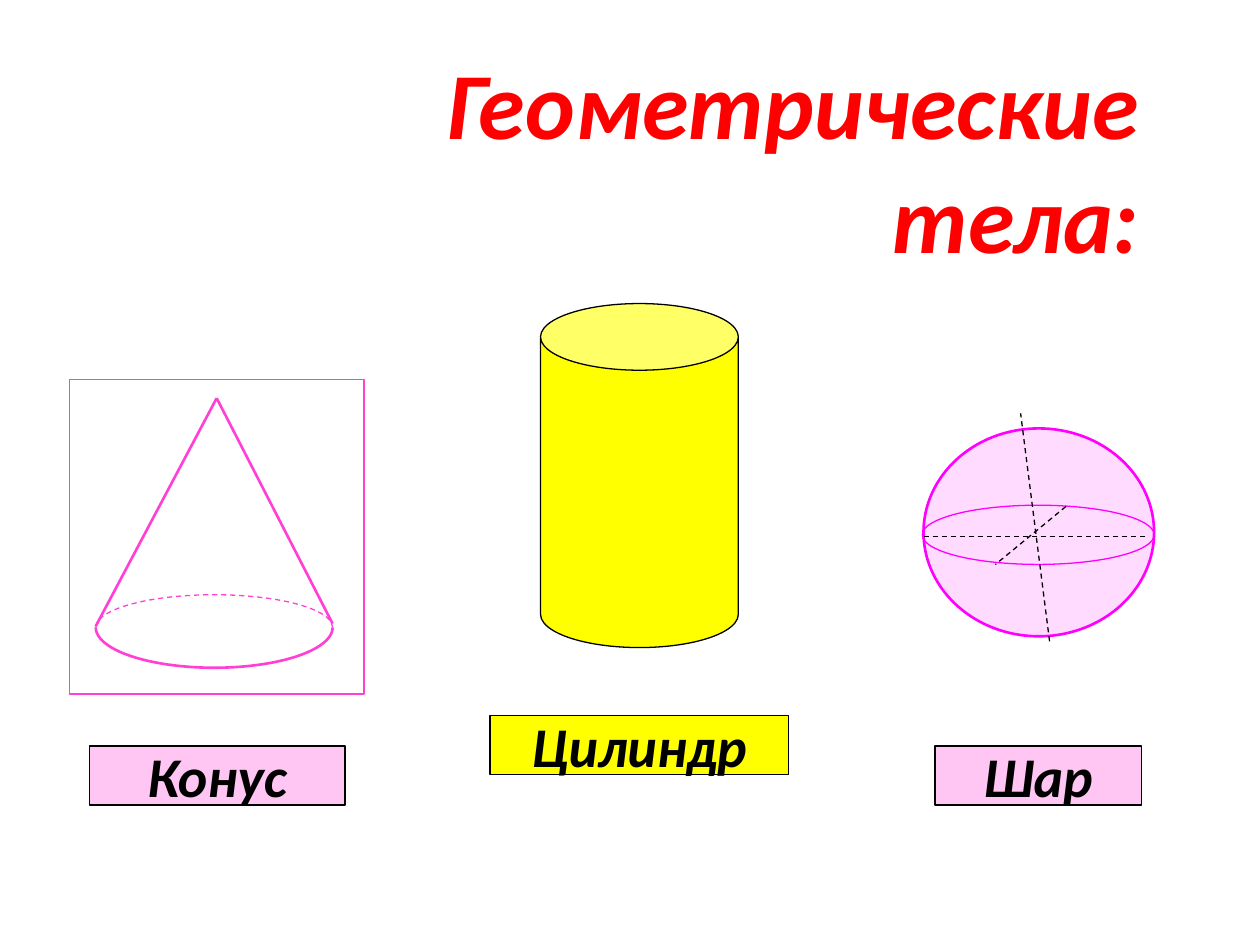
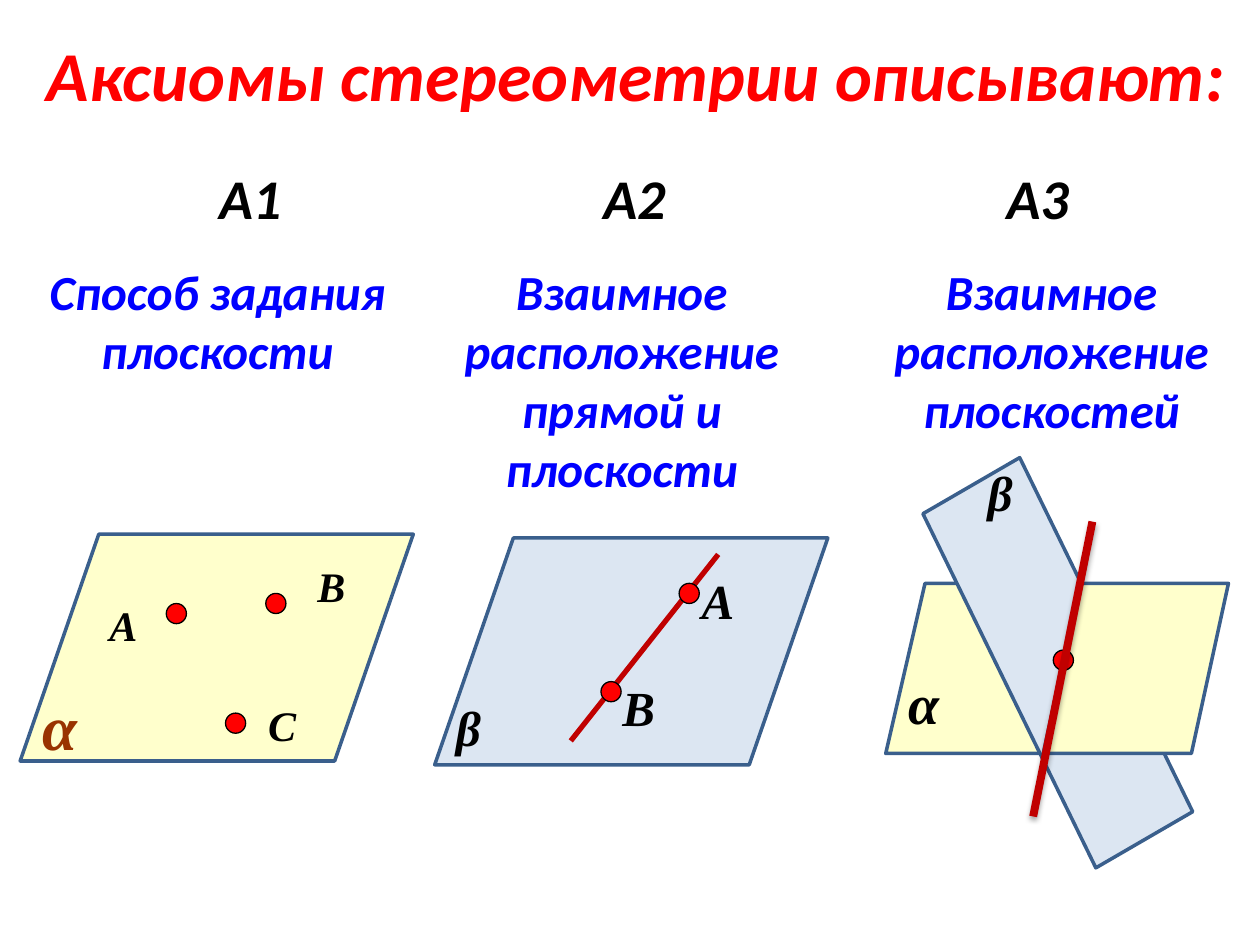
from dataclasses import dataclass
from typing import Any

from lxml.etree import SubElement
from pptx import Presentation
from pptx.dml.color import RGBColor
from pptx.enum.dml import MSO_LINE
from pptx.enum.shapes import MSO_CONNECTOR, MSO_SHAPE
from pptx.enum.text import MSO_ANCHOR, PP_ALIGN
from pptx.oxml.ns import qn
from pptx.util import Inches, Pt


@dataclass(frozen=True)
class Theme:
    """Colours, fonts, type sizes and line widths of the lesson."""
    red: str = "FF0000"
    black: str = "000000"
    blue: str = "0000FF"
    brown: str = "993300"
    yellow: str = "FFFF00"
    pink: str = "FFC5F3"
    cone: str = "FF3FD6"
    sphere: str = "FF00FF"
    sphere_fill: str = "FFCCFF"
    plane_yellow: str = "FFFFCC"
    plane_blue: str = "DCE6F2"
    plane_edge: str = "3A5F8C"
    crossing: str = "C00000"
    words: str = "Calibri"
    symbols: str = "Times New Roman"
    cover: int = 54
    title: int = 40
    heading: int = 32
    caption: int = 28
    letter: int = 24
    greek: int = 36
    thin: float = 0.75
    medium: float = 1.5
    edge: float = 2
    dot: float = 0.16


THEME = Theme()


def style_line(line, color, width, dashed=False):
    """Give a line its colour, width and dash."""
    line.color.rgb = RGBColor.from_string(color)
    line.width = Pt(width)
    if dashed:
        line.dash_style = MSO_LINE.DASH


def write(frame, words, size, color=THEME.black, font=THEME.words, align=PP_ALIGN.LEFT):
    """Fill a text frame with bold italic text."""
    frame.text = words
    for paragraph in frame.paragraphs:
        paragraph.alignment = align
        for run in paragraph.runs:
            run.font.size = Pt(size)
            run.font.name = font
            run.font.bold = run.font.italic = True
            run.font.color.rgb = RGBColor.from_string(color)


@dataclass
class Region:
    """A part of a slide whose contents are placed from its top left corner."""
    shapes: Any
    left: float
    top: float

    def place(self, x, y):
        """Turn an offset in the region into a slide position."""
        return Inches(self.left + x), Inches(self.top + y)

    def outline(self, preset, x, y, width, height, color, weight, fill=None, dashed=False):
        """Add a preset shape with an outline and an optional fill."""
        figure = self.shapes.add_shape(preset, *self.place(x, y), Inches(width), Inches(height))
        figure.shadow.inherit = False
        if fill:
            figure.fill.solid()
            figure.fill.fore_color.rgb = RGBColor.from_string(fill)
        else:
            figure.fill.background()
        style_line(figure.line, color, weight, dashed)
        return figure

    def segment(self, start, end, color, weight, dashed=False):
        """Add a straight line and return its effect list."""
        stroke = self.shapes.add_connector(
            MSO_CONNECTOR.STRAIGHT, *self.place(*start), *self.place(*end))
        style_line(stroke.line, color, weight, dashed)
        return SubElement(stroke.element.spPr, qn("a:effectLst"))

    def text(self, x, y, width, height, words, size, **style):
        """Add a wrapping text box."""
        frame = self.shapes.add_textbox(
            *self.place(x, y), Inches(width), Inches(height)).text_frame
        frame.word_wrap = True
        write(frame, words, size, **style)
        return frame

    def symbol(self, x, y, letter, size, color=THEME.black, width=0.55):
        """Add the letter of a point or a plane."""
        self.text(x, y, width, size / 60 + 0.1, letter, size, color=color, font=THEME.symbols)

    def plane(self, x, y, width, height, fill):
        """Add a slanted plane."""
        return self.outline(MSO_SHAPE.FLOWCHART_DATA, x, y, width, height,
                            THEME.plane_edge, THEME.edge, fill)

    def point(self, x, y, preset=MSO_SHAPE.OVAL):
        """Add a red point."""
        self.outline(preset, x, y, THEME.dot, THEME.dot, THEME.black, THEME.thin, THEME.red)

    def name_plate(self, x, y, width, words, fill):
        """Add the framed name of a solid."""
        plate = self.outline(MSO_SHAPE.RECTANGLE, x, y, width, 0.47,
                             THEME.black, THEME.thin, fill)
        plate.text_frame.word_wrap = False
        plate.text_frame.vertical_anchor = MSO_ANCHOR.MIDDLE
        write(plate.text_frame, words, THEME.heading, align=PP_ALIGN.CENTER)

    def grouped(self):
        """Open a group at the same corner."""
        return Region(self.shapes.add_group_shape().shapes, self.left, self.top)


def draw_cone(region):
    """Draw the framed cone and its name."""
    cone = region.grouped()
    cone.outline(MSO_SHAPE.RECTANGLE, 0, 0, 2.34, 2.5, THEME.cone, THEME.thin)
    for foot in ((0.21, 1.96), (2.09, 1.94)):
        cone.segment((1.17, 0.15), foot, THEME.cone, THEME.medium)
    half_turn = 108
    for depth, start, end, weight, dashed in (
            (0.32, 0, half_turn, THEME.medium, False),
            (0.26, half_turn, 0, THEME.thin, True)):
        rim = cone.outline(MSO_SHAPE.ARC, 0.21, 1.97 - depth, 1.88, 2 * depth,
                           THEME.cone, weight, dashed=dashed)
        rim.adjustments[0], rim.adjustments[1] = start, end
    region.name_plate(0.16, 2.91, 2.03, "Конус", THEME.pink)


def draw_cylinder(region):
    """Draw the cylinder and its name."""
    can = region.outline(MSO_SHAPE.CAN, 0.4, 0, 1.57, 2.73, THEME.black, THEME.thin, THEME.yellow)
    can.adjustments[0] = 0.337
    region.name_plate(0, 3.27, 2.37, "Цилиндр", THEME.yellow)


def draw_sphere(region):
    """Draw the sphere with its equator and axes, and its name."""
    sphere = region.grouped()
    ball = sphere.outline(MSO_SHAPE.OVAL, 0.01, 0.12, 1.83, 1.65,
                          THEME.sphere, THEME.medium, THEME.sphere_fill)
    tint = ball.element.spPr.find(qn("a:solidFill"))[0]
    SubElement(tint, qn("a:alpha"), val="69000")
    sphere.outline(MSO_SHAPE.OVAL, 0, 0.73, 1.84, 0.47, THEME.sphere, THEME.thin)
    for start, end in (((0.01, 0.98), (1.8, 0.98)),
                       ((1.14, 0.74), (0.58, 1.2)),
                       ((1.01, 1.81), (0.78, 0))):
        sphere.segment(start, end, THEME.black, THEME.thin, dashed=True)
    region.name_plate(0.1, 2.64, 1.64, "Шар", THEME.pink)


def build_solids(slide):
    """Build the slide of geometric solids."""
    cover = Region(slide.shapes, 3.11, 0.31)
    frame = cover.text(0, 0, 6.03, 1.79, "Геометрические\nтела:", THEME.cover,
                       color=THEME.red, align=PP_ALIGN.RIGHT)
    frame.vertical_anchor = MSO_ANCHOR.TOP
    draw_cylinder(Region(slide.shapes, 3.89, 2.41))
    draw_sphere(Region(slide.shapes, 7.32, 3.28))
    draw_cone(Region(slide.shapes, 0.55, 3.01))


def head_axiom(region, number, number_x, caption, caption_x, caption_width, caption_height):
    """Write the number and the caption of an axiom."""
    region.text(number_x, 0, 0.9, 0.64, number, THEME.heading)
    region.text(caption_x, 0.78, caption_width, caption_height, caption, THEME.caption,
                color=THEME.blue, align=PP_ALIGN.CENTER)


def draw_three_points(region):
    """Draw the plane given by three points."""
    region.plane(0, 2.99, 3.12, 1.8, THEME.plane_yellow)
    head_axiom(region, "А1", 1.48, "Способ задания плоскости", 0.07, 2.99, 1.04)
    for dot, letter, name in (((1.16, 3.54), "А", (0.61, 3.46)),
                              ((1.95, 3.46), "В", (2.26, 3.15)),
                              ((1.63, 4.41), "С", (1.87, 4.25))):
        region.point(*dot)
        region.symbol(*name, letter, THEME.letter)
    region.symbol(0.08, 4.16, "α", THEME.greek, THEME.brown)


def draw_line_in_plane(region):
    """Draw the line that lies in a plane."""
    region.plane(0, 3.02, 3.12, 1.8, THEME.plane_blue)
    region.segment((2.25, 3.15), (1.08, 4.63), THEME.crossing, 3)
    head_axiom(region, "А2", 1.24, "Взаимное расположение прямой и плоскости", -0.25, 3.47, 1.99)
    for dot, letter, name in (((1.94, 3.38), "А", (2.02, 3.23)),
                              ((1.32, 4.16), "В", (1.39, 4.08))):
        region.point(*dot)
        region.symbol(*name, letter, THEME.caption)
    region.symbol(0.07, 4.24, "β", THEME.caption)


def draw_crossing_planes(region):
    """Draw two planes that cross along a line."""
    head_axiom(region, "А3", 0.86, "Взаимное расположение плоскостей", -0.34, 3.31, 1.51)
    planes = region.grouped()
    planes.plane(0, 3.38, 1.56, 1.35, THEME.plane_yellow)
    planes.plane(0.81, 2.45, 1.11, 3.12, THEME.plane_blue).rotation = 149.9
    planes.plane(1.25, 3.38, 1.47, 1.35, THEME.plane_yellow)
    planes.symbol(0.08, 4.01, "α", THEME.heading, width=0.34)
    planes.symbol(0.71, 2.37, "β", THEME.caption, width=0.27)
    planes.point(1.33, 3.91, MSO_SHAPE.FLOWCHART_CONNECTOR)
    effects = planes.segment((1.17, 5.23), (1.64, 2.89), THEME.crossing, 4.5)
    shadow = SubElement(effects, qn("a:outerShdw"), blurRad=str(Pt(3.1)), dist=str(Pt(1.8)),
                        dir="5400000", rotWithShape="0")
    shade = SubElement(shadow, qn("a:srgbClr"), val=THEME.black)
    SubElement(shade, qn("a:alpha"), val="35000")


def build_axioms(slide):
    """Build the slide of the three axioms."""
    Region(slide.shapes, 0.22, 0.2).text(
        0, 0, 9.65, 0.77, "Аксиомы стереометрии описывают:", THEME.title,
        color=THEME.red, align=PP_ALIGN.CENTER)
    columns = ((0.16, draw_three_points), (3.45, draw_line_in_plane), (7.03, draw_crossing_planes))
    for left, draw_axiom in columns:
        draw_axiom(Region(slide.shapes, left, 1.25))


def main():
    """Build and save the lesson."""
    lesson = Presentation()
    lesson.slide_width, lesson.slide_height = Inches(10), Inches(7.5)
    for build in (build_solids, build_axioms):
        build(lesson.slides.add_slide(lesson.slide_layouts[6]))
    lesson.save("out.pptx")


if __name__ == "__main__":
    main()
